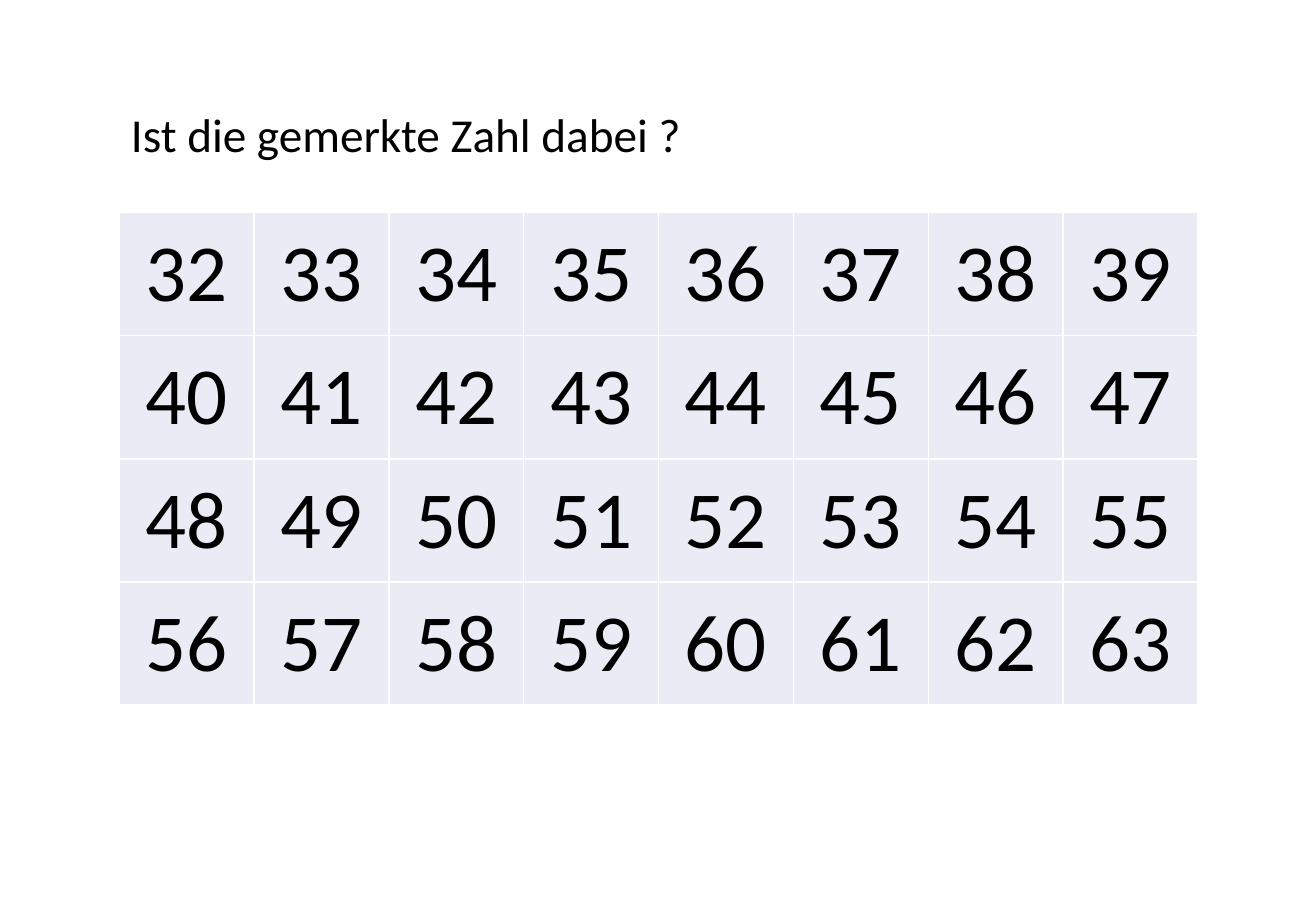
from dataclasses import dataclass

from lxml import etree
from pptx import Presentation
from pptx.dml.color import RGBColor
from pptx.enum.text import MSO_ANCHOR, MSO_AUTO_SIZE, PP_ALIGN
from pptx.oxml.ns import qn
from pptx.util import Inches, Pt

CENTER = PP_ALIGN.CENTER
LEFT = PP_ALIGN.LEFT
TOP = MSO_ANCHOR.TOP
GROW = MSO_AUTO_SIZE.SHAPE_TO_FIT_TEXT


@dataclass(frozen=True)
class Theme:
    """Fonts, type sizes and colours of the number card."""

    font: str = "Calibri"
    question_size: int = 28
    number_size: int = 48
    text: str = "000000"
    cell: str = "E9EBF5"
    border: str = "FFFFFF"
    border_width: int = 1


class CardSlide:
    """Draws the elements of a number card on one slide."""

    def __init__(self, prs, theme):
        self.theme = theme
        self.s = prs.slides.add_slide(prs.slide_layouts[6])

    def add_text(self, tf, text, size, align):
        """Put one formatted run into a text frame."""
        p = tf.paragraphs[0]
        p.alignment = align
        r = p.add_run()
        r.text = text
        r.font.color.rgb = RGBColor.from_string(self.theme.text)
        for name, value in {"name": self.theme.font, "size": Pt(size)}.items():
            setattr(r.font, name, value)

    def question(self, text, left, top, width, height):
        """Add the question as a text box that keeps to one line."""
        tf = self.s.shapes.add_textbox(
            Inches(left), Inches(top), Inches(width), Inches(height)).text_frame
        for name, value in {"word_wrap": False, "auto_size": GROW}.items():
            setattr(tf, name, value)
        self.add_text(tf, text, self.theme.question_size, LEFT)

    def borders(self, cell):
        """Give all four sides of a cell the theme's border."""
        tc_pr = cell._tc.get_or_add_tcPr()
        for side in ("a:lnL", "a:lnR", "a:lnT", "a:lnB"):
            ln = etree.SubElement(
                tc_pr, qn(side), w=str(Pt(self.theme.border_width)))
            fill = etree.SubElement(ln, qn("a:solidFill"))
            etree.SubElement(fill, qn("a:srgbClr"), val=self.theme.border)

    def number_grid(self, first, rows, cols, left, top, col_width, row_height):
        """Add a table of consecutive numbers, row by row."""
        table = self.s.shapes.add_table(
            rows, cols, Inches(left), Inches(top),
            Inches(cols * col_width), Inches(rows * row_height)).table
        table.first_row = table.horz_banding = False
        layout = {
            "margin_left": Inches(0.04), "margin_right": Inches(0.04),
            "margin_top": Inches(0.1), "margin_bottom": Inches(0.1),
            "vertical_anchor": TOP,
        }
        for number, cell in enumerate(table.iter_cells(), first):
            for name, value in layout.items():
                setattr(cell, name, value)
            self.borders(cell)
            cell.fill.solid()
            cell.fill.fore_color.rgb = RGBColor.from_string(self.theme.cell)
            self.add_text(cell.text_frame, str(number),
                          self.theme.number_size, CENTER)


def main():
    """Build the card with the numbers from 32 to 63."""
    prs = Presentation()
    prs.slide_width, prs.slide_height = Inches(10.83), Inches(7.5)
    card = CardSlide(prs, Theme())
    card.number_grid(first=32, rows=4, cols=8, left=0.98, top=1.75,
                     col_width=1.11, row_height=1.01)
    card.question("Ist die gemerkte Zahl dabei ?", 0.98, 0.82, 4.77, 0.57)
    prs.save("out.pptx")


if __name__ == "__main__":
    main()
